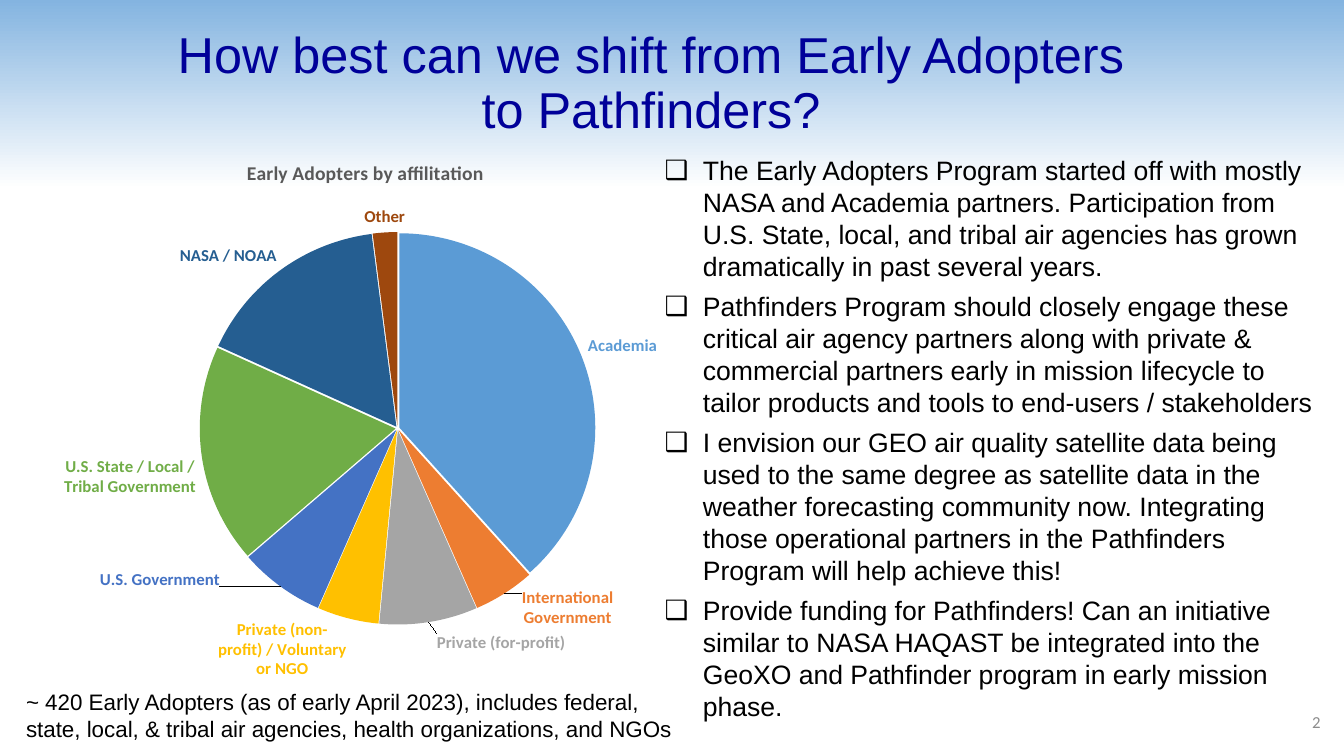
import pptx
import pptx.chart.data
import pptx.dml.color
import pptx.enum.chart
import pptx.enum.text
import pptx.oxml
import pptx.oxml.ns
import pptx.util

TITLE = "How best can we shift from Early Adopters to Pathfinders?"
POINTS = [
    "The Early Adopters Program started off with mostly NASA and Academia partners. Participation from U.S. State, local, and tribal air agencies has grown dramatically in past several years.",
    "Pathfinders Program should closely engage these critical air agency partners along with private & commercial partners early in mission lifecycle to tailor products and tools to end-users / stakeholders",
    "I envision our GEO air quality satellite data being used to the same degree as satellite data in the weather forecasting community now. Integrating those operational partners in the Pathfinders Program will help achieve this!",
    "Provide funding for Pathfinders! Can an initiative similar to NASA HAQAST be integrated into the GeoXO and Pathfinder program in early mission phase.",
]
CAPTION = "~ 420 Early Adopters (as of early April 2023), includes federal, state, local, & tribal air agencies, health organizations, and NGOs"
PAGE_NUMBER = "2"
CHART_TITLE = "Early Adopters by affilitation"
AFFILIATIONS = [
    ("Academia", 38, "5B9BD5", None),
    ("International Government", 5, "ED7D31", (0.02, -0.02)),
    ("Private (for-profit)", 8, "A5A5A5", (0.01, 0.01)),
    ("Private (non-profit) / Voluntary or NGO", 5, "FFC000", None),
    ("U.S. Government", 7, "4472C4", (-0.08, -0.04)),
    ("U.S. State / Local / Tribal Government", 18, "70AD47", None),
    ("NASA / NOAA", 16, "255E91", None),
    ("Other", 2, "9E480E", None),
]
THEME = {
    "text_font": "Arial", "chart_font": "Calibri",
    "title": "000099", "text": "000000", "muted": "8C8C8C", "chart_title": "595959",
    "sky": "84B4E0", "ground": "FFFFFF",
    "title_size": 36, "list_size": 19, "caption_size": 16,
    "chart_title_size": 14, "label_size": 12, "number_size": 12,
}
WIDTH, HEIGHT = 13.33, 7.5
AREAS = {
    "title": (0.105, 0.024, 0.759, 0.176),
    "list": (0.487, 0.197, 0.503, 0.77),
    "chart": (0.007, 0.185, 0.53, 0.719),
    "caption": (0.012, 0.904, 0.503, 0.083),
    "number": (0.907, 0.928, 0.083, 0.053),
}
PIE_AREA = {"x": 0.27, "y": 0.17, "w": 0.55, "h": 0.73}
INDENT = pptx.util.Inches(0.38)
ALIGN = pptx.enum.text.PP_ALIGN
ANCHOR = pptx.enum.text.MSO_ANCHOR


def color(value):
    return pptx.dml.color.RGBColor.from_string(value)


def area(name):
    return [pptx.util.Inches(share * side)
            for share, side in zip(AREAS[name], (WIDTH, HEIGHT) * 2)]


def place(box, name):
    box.left, box.top, box.width, box.height = area(name)


def style(font, size, shade, family, bold=False):
    font.size = pptx.util.Pt(size)
    font.color.rgb = color(shade)
    font.name = family
    font.bold = bold


def write(para, text, size, shade, family=THEME["text_font"], align=ALIGN.LEFT):
    para.alignment = align
    span = para.add_run()
    span.text = text
    style(span.font, size, shade, family)


def prepare(box, anchor):
    frame = box.text_frame
    frame.word_wrap = True
    frame.auto_size = pptx.enum.text.MSO_AUTO_SIZE.NONE
    frame.vertical_anchor = anchor
    return frame


def add_bullet(para):
    properties = para._p.get_or_add_pPr()
    properties.set("marL", str(INDENT))
    properties.set("indent", str(-INDENT))
    bullet = properties.makeelement(pptx.oxml.ns.qn("a:buChar"), {"char": "❑"})
    properties.append(bullet)


def manual_layout(values, inner=False):
    modes = '<c:layoutTarget val="inner"/><c:xMode val="edge"/><c:yMode val="edge"/>' if inner else ""
    numbers = "".join(f'<c:{key} val="{value}"/>' for key, value in values.items())
    return pptx.oxml.parse_xml(
        f'<c:layout {pptx.oxml.ns.nsdecls("c")}><c:manualLayout>{modes}{numbers}'
        '</c:manualLayout></c:layout>')


def show_category_only(labels):
    for key in ("showVal", "showPercent", "showSerName", "showLegendKey", "showCatName"):
        for flag in labels.findall(pptx.oxml.ns.qn(f"c:{key}")):
            flag.set("val", "1" if key == "showCatName" else "0")


def add_pie(page):
    data = pptx.chart.data.CategoryChartData()
    data.categories = [name for name, *_ in AFFILIATIONS]
    data.add_series("Series 1", [value for _, value, *_ in AFFILIATIONS])
    chart = page.shapes.add_chart(
        pptx.enum.chart.XL_CHART_TYPE.PIE, *area("chart"), data).chart
    style(chart.font, 10, THEME["text"], THEME["chart_font"])
    chart.has_legend = False
    chart.has_title = True
    span = chart.chart_title.text_frame.paragraphs[0].add_run()
    span.text = CHART_TITLE
    style(span.font, THEME["chart_title_size"], THEME["chart_title"], THEME["chart_font"], True)

    plot_area = chart._chartSpace.chart.plotArea
    for old in plot_area.findall(pptx.oxml.ns.qn("c:layout")):
        plot_area.remove(old)
    plot_area.insert(0, manual_layout(PIE_AREA, True))

    plot = chart.plots[0]
    plot.vary_by_categories = True
    series = plot.series[0]
    for index, (_, _, shade, offset) in enumerate(AFFILIATIONS):
        point = series.points[index]
        point.format.fill.solid()
        point.format.fill.fore_color.rgb = color(shade)
        point.format.line.fill.background()
        explosion = pptx.oxml.parse_xml(f'<c:explosion {pptx.oxml.ns.nsdecls("c")} val="1"/>')
        point.format.fill._xPr.addprevious(explosion)
        label = point.data_label
        style(label.font, THEME["label_size"], shade, THEME["chart_font"], True)
        label.position = pptx.enum.chart.XL_LABEL_POSITION.OUTSIDE_END
        element = label._get_or_add_dLbl()
        show_category_only(element)
        if offset:
            element.insert(1, manual_layout(dict(zip("xy", offset))))
    show_category_only(series.data_labels._element)


def main():
    deck = pptx.Presentation()
    deck.slide_width = pptx.util.Inches(WIDTH)
    deck.slide_height = pptx.util.Inches(HEIGHT)
    page = deck.slides.add_slide(deck.slide_layouts[1])
    fill = page.background.fill
    fill.gradient()
    fill.gradient_angle = 90
    for stop, position, shade in zip(fill.gradient_stops, (0.75, 1), (THEME["ground"], THEME["sky"])):
        stop.position = position
        stop.color.rgb = color(shade)

    title = page.shapes.title
    place(title, "title")
    para = prepare(title, ANCHOR.MIDDLE).paragraphs[0]
    para.line_spacing = 0.9
    write(para, TITLE, THEME["title_size"], THEME["title"], align=ALIGN.CENTER)

    body = page.placeholders[1]
    place(body, "list")
    frame = prepare(body, ANCHOR.TOP)
    for index, text in enumerate(POINTS):
        para = frame.add_paragraph() if index else frame.paragraphs[0]
        add_bullet(para)
        para.space_before = pptx.util.Pt(0)
        para.space_after = pptx.util.Pt(6)
        write(para, text, THEME["list_size"], THEME["text"])

    add_pie(page)

    caption = page.shapes.add_textbox(*area("caption"))
    para = prepare(caption, ANCHOR.TOP).paragraphs[0]
    write(para, CAPTION, THEME["caption_size"], THEME["text"])

    number = page.shapes.add_textbox(*area("number"))
    para = prepare(number, ANCHOR.MIDDLE).paragraphs[0]
    write(para, PAGE_NUMBER, THEME["number_size"], THEME["muted"], THEME["chart_font"], ALIGN.RIGHT)

    deck.save("out.pptx")


if __name__ == "__main__":
    main()
